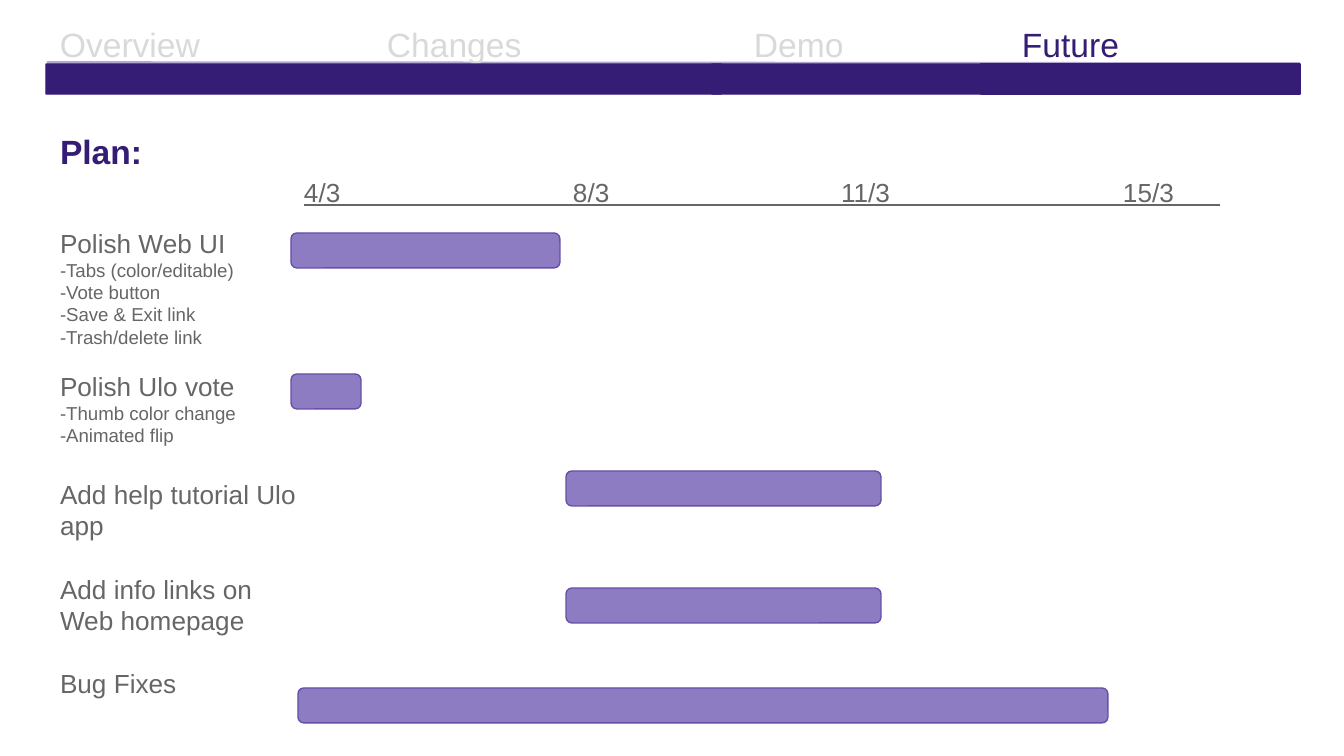
import dataclasses

import lxml.etree
import pptx
import pptx.dml.color
import pptx.enum.shapes
import pptx.enum.text
import pptx.oxml.ns
import pptx.util

SCALE = 914400 / 134.4
SHAPE = pptx.enum.shapes.MSO_SHAPE
INSET = 13


@dataclasses.dataclass(frozen=True)
class Theme:
    """Colours, font and type sizes of the deck."""
    font: str = "Arial"
    accent: str = "351C75"
    rule: str = "B4A7D6"
    muted: str = "D9D9D9"
    body: str = "666666"
    bar: str = "8E7CC3"
    bar_line: str = "674EA7"
    heading: int = 18
    label: int = 14
    detail: int = 10


THEME = Theme()


def px(n):
    """Turn pixels into EMU."""
    return pptx.util.Emu(round(n * SCALE))


def rgb(color):
    """Turn a hex string into a colour."""
    return pptx.dml.color.RGBColor.from_string(color)


def set_attrs(obj, values):
    """Set each named attribute on an object."""
    for name, value in values.items():
        setattr(obj, name, value)


def format_frame(s):
    """Prepare the text frame of a shape and return it."""
    tf = s.text_frame
    margins = {f"margin_{side}": px(INSET) for side in ("left", "top", "right", "bottom")}
    set_attrs(tf, {**margins, "word_wrap": True,
                   "auto_size": pptx.enum.text.MSO_AUTO_SIZE.NONE,
                   "vertical_anchor": pptx.enum.text.MSO_ANCHOR.TOP})
    return tf


def add_text_box(slide, box):
    """Add an empty text box and return its frame."""
    return format_frame(slide.shapes.add_textbox(*map(px, box)))


def add_run(p, text, size, color, **font):
    """Add a formatted run to a paragraph."""
    r = p.add_run()
    r.text = text
    set_attrs(r.font, {"name": THEME.font, "size": pptx.util.Pt(size), **font})
    r.font.color.rgb = rgb(color)


def add_tabs(p, stops):
    """Give a paragraph left tab stops."""
    qn = pptx.oxml.ns.qn
    tabs = lxml.etree.SubElement(p._p.get_or_add_pPr(), qn("a:tabLst"))
    for stop in stops:
        lxml.etree.SubElement(tabs, qn("a:tab"), pos=str(px(stop)), algn="l")


def add_line(slide, ends, color, width):
    """Add a straight line without a shadow."""
    kind = pptx.enum.shapes.MSO_CONNECTOR.STRAIGHT
    s = slide.shapes.add_connector(kind, *map(px, ends))
    s.line.color.rgb = rgb(color)
    s.line.width = pptx.util.Pt(width)
    lxml.etree.SubElement(s._element.spPr, pptx.oxml.ns.qn("a:effectLst"))


def add_block(slide, kind, box, fill, line):
    """Add a flat filled shape with a thin outline."""
    s = slide.shapes.add_shape(kind, *map(px, box))
    s.shadow.inherit = False
    s.fill.solid()
    s.fill.fore_color.rgb = rgb(fill)
    s.line.color.rgb = rgb(line)
    s.line.width = pptx.util.Pt(0.75)


def add_navigation(slide, box, sections, active):
    """Draw the section names above the banner of arrows."""
    x, y, w, h = box
    add_line(slide, (x, y + h, x + w, y + h + 1), THEME.rule, 3)

    p = add_text_box(slide, box).paragraphs[0]
    set_attrs(p, {"line_spacing": 1.15, "space_after": pptx.util.Pt(16)})
    add_tabs(p, [stop for _, stop in sections[1:]])
    for i, (name, _) in enumerate(sections):
        color = THEME.accent if name == active else THEME.muted
        add_run(p, "\t" * (i > 0) + name, THEME.heading, color)

    banner = ((SHAPE.PENTAGON, -1, 348), (SHAPE.CHEVRON, 333, 356),
              (SHAPE.RECTANGLE, 934, 319), (SHAPE.CHEVRON, 665, 298))
    for kind, dx, width in banner:
        add_block(slide, kind, (x + dx, y + h, width, 30), THEME.accent, THEME.accent)


def add_title(slide, box, text):
    """Place and format the title placeholder."""
    s = slide.shapes.title
    set_attrs(s, dict(zip(("left", "top", "width", "height"), map(px, box))))
    p = format_frame(s).paragraphs[0]
    set_attrs(p, {"line_spacing": 1.15, "space_after": pptx.util.Pt(16),
                  "alignment": pptx.enum.text.PP_ALIGN.LEFT})
    add_run(p, text, THEME.heading, THEME.accent, bold=True)


def add_timeline(slide, box, dates, length):
    """Write the dates in a row above a rule."""
    x, y, _, _ = box
    p = add_text_box(slide, box).paragraphs[0]
    add_tabs(p, [stop for _, stop in dates[1:]])
    add_run(p, "\t".join(date for date, _ in dates), THEME.label, THEME.body)
    left, base = x + INSET, y + 42
    add_line(slide, (left, base, left + length, base), THEME.body, 1)


def add_tasks(slide, box, tasks):
    """List the tasks, each with its details."""
    tf = add_text_box(slide, box)
    p = tf.paragraphs[0]
    for i, (name, gap, details) in enumerate(tasks):
        if i:
            p = tf.add_paragraph()
            p.space_before = pptx.util.Pt(gap)
        add_run(p, name, THEME.label, THEME.body)
        for detail in details:
            add_run(tf.add_paragraph(), "-" + detail, THEME.detail, THEME.body)


def add_bars(slide, box, bars):
    """Draw the bars of the schedule."""
    x, y, _, _ = box
    for dx, dy, width in bars:
        add_block(slide, SHAPE.ROUNDED_RECTANGLE, (x + dx, y + dy, width, 35),
                  THEME.bar, THEME.bar_line)


def main():
    """Build the plan slide."""
    prs = pptx.Presentation()
    set_attrs(prs, {"slide_width": px(1344), "slide_height": px(756)})
    slide = prs.slides.add_slide(prs.slide_layouts[5])
    add_title(slide, (47, 112, 386, 102), "Plan:")
    sections = (("Overview", 0), ("Changes", 327), ("Demo", 694), ("Future", 962))
    add_navigation(slide, (47, 5, 1253, 59), sections, "Future")
    dates = (("4/3", 0), ("8/3", 269), ("11/3", 537), ("15/3", 819))
    add_timeline(slide, (291, 163, 1141, 52), dates, 916)
    add_tasks(slide, (47, 214, 273, 448), (
        ("Polish Web UI", 0, ("Tabs (color/editable)", "Vote button",
                              "Save & Exit link", "Trash/delete link")),
        ("Polish Ulo vote", 12, ("Thumb color change", "Animated flip")),
        ("Add help tutorial Ulo app", 17, ()),
        ("Add info links on Web homepage", 17, ()),
        ("Bug Fixes", 17, ()),
    ))
    add_bars(slide, (291, 233, 818, 490), (
        (0, 0, 269), (0, 141, 70), (275, 238, 315), (275, 355, 315), (7, 455, 810)))
    prs.save("out.pptx")


if __name__ == "__main__":
    main()
